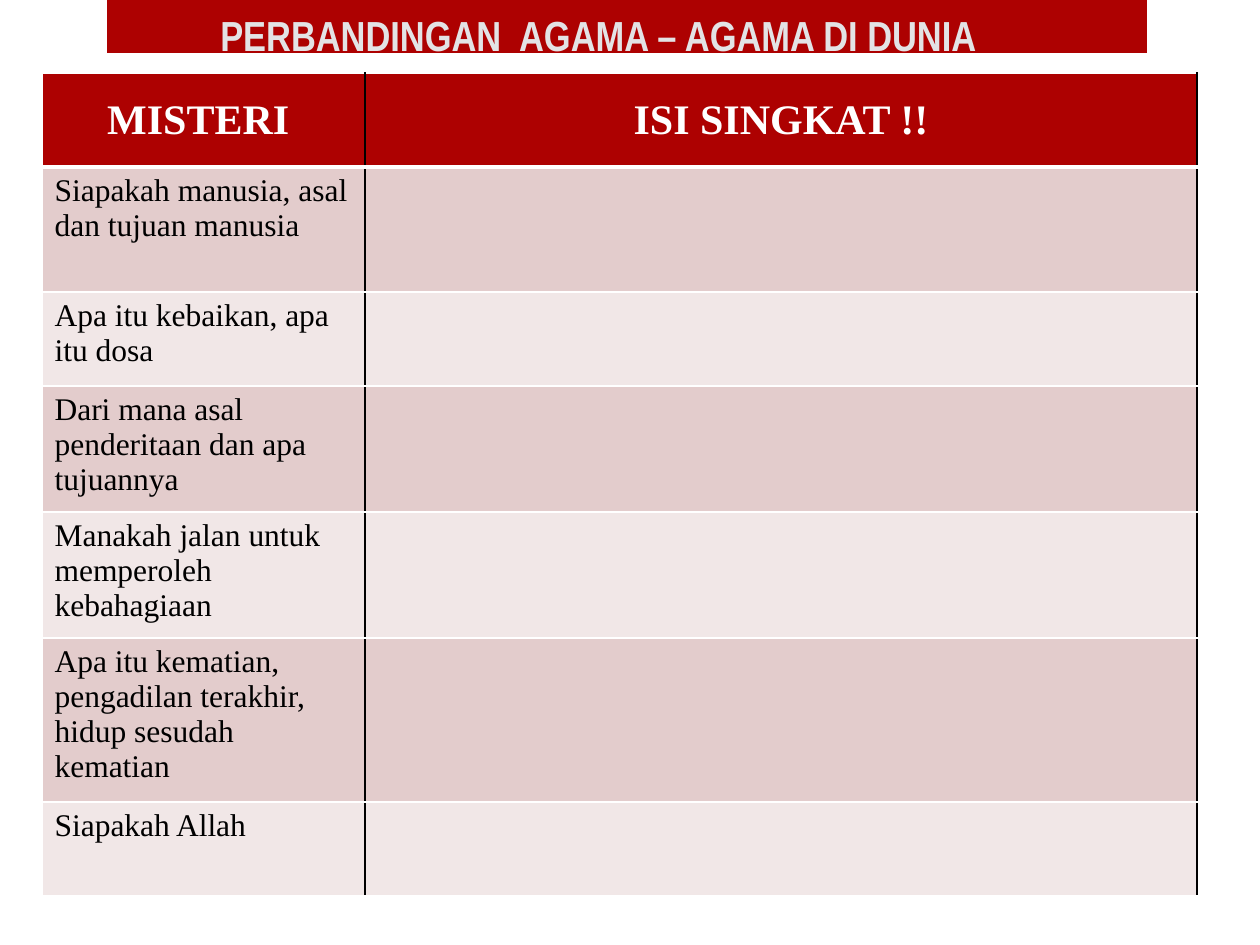
from dataclasses import dataclass

import lxml.etree
import pptx
import pptx.dml.color
import pptx.enum.shapes
import pptx.enum.text
import pptx.oxml.ns
import pptx.util

EMU_PER_PX = 914400 / 126
COLUMN_WIDTHS = (323, 832)
HEADINGS = ("MISTERI ", "ISI SINGKAT !!")
QUESTIONS = (
    ("Siapakah manusia, asal dan tujuan manusia", 125),
    ("Apa itu kebaikan, apa itu dosa", 94),
    ("Dari mana asal penderitaan dan apa tujuannya", 125),
    ("Manakah jalan untuk memperoleh kebahagiaan", 125),
    ("Apa itu kematian, pengadilan terakhir, hidup sesudah kematian", 161),
    ("Siapakah Allah", 94),
)
HEADER_HEIGHT = 94


@dataclass(frozen=True)
class Theme:
    """Colours, fonts and type sizes of the slide."""

    accent: str = "AD0101"
    title: str = "E3E3E5"
    white: str = "FFFFFF"
    black: str = "000000"
    bands: tuple = ("E3CCCC", "F1E7E7")
    title_font: str = "Arial Narrow"
    table_font: str = "Times New Roman"
    heading_size: int = 24
    body_size: int = 18


THEME = Theme()


def px(length):
    """Turn pixels into EMU."""
    return pptx.util.Emu(round(length * EMU_PER_PX))


def fill_solid(fill, color):
    """Give a fill one plain colour."""
    fill.solid()
    fill.fore_color.rgb = pptx.dml.color.RGBColor.from_string(color)


def write_text(text_frame, text, font_name, size, color, bold=False, centered=False):
    """Set the text of a frame and format its run."""
    text_frame.text = text
    paragraph = text_frame.paragraphs[0]
    if centered:
        paragraph.alignment = pptx.enum.text.PP_ALIGN.CENTER
    for run in paragraph.runs:
        run.font.name = font_name
        run.font.size = pptx.util.Pt(size)
        run.font.bold = bold
        run.font.color.rgb = pptx.dml.color.RGBColor.from_string(color)


def add_title_bar(slide):
    """Draw the red bar at the top edge."""
    shape = slide.shapes.add_shape(
        pptx.enum.shapes.MSO_SHAPE.RECTANGLE, px(107), px(0), px(1040), px(53)
    )
    shape.shadow.inherit = False
    fill_solid(shape.fill, THEME.accent)
    shape.line.fill.background()


def add_title(slide, text):
    """Place the slide title over the bar."""
    text_frame = slide.shapes.add_textbox(px(21), px(3), px(1155), px(63)).text_frame
    text_frame.word_wrap = True
    text_frame.vertical_anchor = pptx.enum.text.MSO_ANCHOR.BOTTOM
    write_text(text_frame, text, THEME.title_font, THEME.heading_size, THEME.title, True, True)


def set_borders(cell, borders):
    """Draw cell borders given as (side, colour, width in points)."""
    properties = cell._tc.get_or_add_tcPr()
    for position, (side, color, width) in enumerate(borders):
        line = lxml.etree.Element(
            pptx.oxml.ns.qn(f"a:ln{side}"), w=str(int(pptx.util.Pt(width)))
        )
        solid = lxml.etree.SubElement(line, pptx.oxml.ns.qn("a:solidFill"))
        lxml.etree.SubElement(solid, pptx.oxml.ns.qn("a:srgbClr"), val=color)
        properties.insert(position, line)


def style_cell(cell, row, column):
    """Fill and border a cell according to its place in the table."""
    is_header = row == 0
    fill_solid(cell.fill, THEME.accent if is_header else THEME.bands[(row - 1) % 2])
    set_borders(
        cell,
        (
            ("L", THEME.white if column == 0 else THEME.black, 1),
            ("R", THEME.black, 1),
            ("T", THEME.white, 3 if row == 1 else 1),
            ("B", THEME.white, 3 if is_header else 1),
        ),
    )


def add_question_table(slide):
    """Build the table of questions with an empty answer column."""
    heights = [HEADER_HEIGHT] + [height for _, height in QUESTIONS]
    table = slide.shapes.add_table(
        len(heights), len(COLUMN_WIDTHS),
        px(42), px(73), px(sum(COLUMN_WIDTHS)), px(sum(heights)),
    ).table
    for column, width in zip(table.columns, COLUMN_WIDTHS):
        column.width = px(width)
    for row, height in zip(table.rows, heights):
        row.height = px(height)
    for row in range(len(heights)):
        for column in range(len(COLUMN_WIDTHS)):
            style_cell(table.cell(row, column), row, column)
    for column, heading in enumerate(HEADINGS):
        cell = table.cell(0, column)
        cell.vertical_anchor = pptx.enum.text.MSO_ANCHOR.MIDDLE
        write_text(
            cell.text_frame, heading, THEME.table_font, THEME.heading_size,
            THEME.white, True, True,
        )
    for row, (question, _) in enumerate(QUESTIONS, start=1):
        write_text(
            table.cell(row, 0).text_frame, question, THEME.table_font,
            THEME.body_size, THEME.black,
        )


def main():
    """Build and save the slide."""
    presentation = pptx.Presentation()
    presentation.slide_width = px(1260)
    presentation.slide_height = px(945)
    slide = presentation.slides.add_slide(presentation.slide_layouts[6])
    add_title_bar(slide)
    add_title(slide, "PERBANDINGAN  AGAMA – AGAMA DI DUNIA")
    add_question_table(slide)
    presentation.save("out.pptx")


if __name__ == "__main__":
    main()
